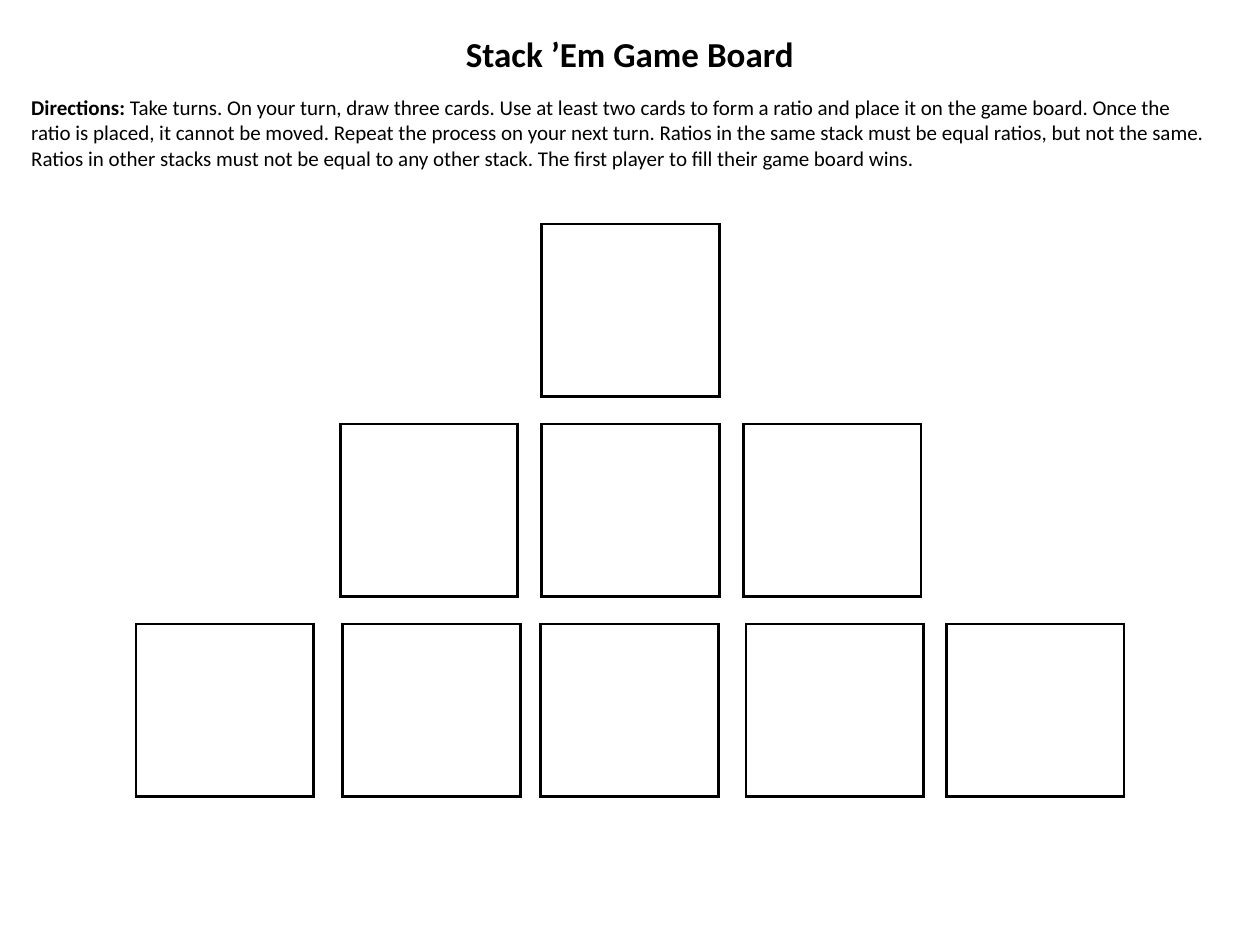
from lxml import etree
from pptx import Presentation
from pptx.dml.color import RGBColor
from pptx.enum.shapes import MSO_SHAPE as Shape
from pptx.enum.text import MSO_ANCHOR as Anchor, PP_ALIGN as Align
from pptx.oxml.ns import qn
from pptx.util import Cm, Pt

PAGE_WIDTH, PAGE_HEIGHT = 25.4, 19.05
CELL_WIDTH, CELL_HEIGHT = 3.58, 3.48
BOARD_TOP, ROW_STEP = 4.52, 4.03
ROW_LEFTS = (
    (10.92,),
    (6.86, 10.92, 14.99),
    (2.74, 6.91, 10.9, 15.04, 19.08),
)

DIRECTIONS = (
    "Take turns. On your turn, draw three cards. Use at least two cards to form "
    "a ratio and place it on the game board. Once the ratio is placed, it cannot "
    "be moved. Repeat the process on your next turn. Ratios in the same stack "
    "must be equal ratios, but not the same. Ratios in other stacks must not be "
    "equal to any other stack. The first player to fill their game board wins."
)


def color(hex_string):
    return RGBColor.from_string(hex_string)


class GameBoard:
    """Holds the style and the page being drawn."""

    font = "Calibri"
    ink = "000000"
    paper = "FFFFFF"

    def __init__(self, page):
        self.page = page

    def rectangle(self, left, top, width, height, line, line_width):
        """Add a filled rectangle with sharp corners."""
        box = self.page.shapes.add_shape(
            Shape.RECTANGLE, Cm(left), Cm(top), Cm(width), Cm(height))
        box.shadow.inherit = False
        box.fill.solid()
        box.fill.fore_color.rgb = color(self.paper)
        box.line.color.rgb = color(line)
        box.line.width = Pt(line_width)
        outline = box.line.fill._xPr.find(qn("a:ln"))
        if outline is None:
            outline = box.line.fill._xPr
        etree.SubElement(outline, qn("a:miter"), lim="800000")
        return box

    def text(self, left, top, width, height, spans, size, align):
        """Add a one-paragraph box; spans are (wording, bold) pairs."""
        box = self.rectangle(left, top, width, height, self.paper, 1)
        frame = box.text_frame
        frame.word_wrap = True
        frame.vertical_anchor = Anchor.MIDDLE
        para = frame.paragraphs[0]
        para.alignment = align
        for wording, bold in spans:
            span = para.add_run()
            span.text = wording
            span.font.name = self.font
            span.font.size = Pt(size)
            span.font.bold = bold
            span.font.color.rgb = color(self.ink)
        return frame

    def row(self, top, lefts):
        for left in lefts:
            self.rectangle(left, top, CELL_WIDTH, CELL_HEIGHT, self.ink, 1.5)


def main():
    deck = Presentation()
    deck.slide_width, deck.slide_height = Cm(PAGE_WIDTH), Cm(PAGE_HEIGHT)
    board = GameBoard(deck.slides.add_slide(deck.slide_layouts[6]))

    board.text(0.38, 0.5, 24.64, 1.17,
               [("Stack ’Em Game Board", True)], 20, Align.CENTER)
    directions = board.text(0.38, 1.91, 24.28, 1.98,
                            [("Directions: ", True), (DIRECTIONS, False)],
                            12, Align.LEFT)
    directions.vertical_anchor = Anchor.TOP
    directions.margin_top = Cm(0)
    for index, lefts in enumerate(ROW_LEFTS):
        board.row(BOARD_TOP + index * ROW_STEP, lefts)

    deck.save("out.pptx")


if __name__ == "__main__":
    main()
